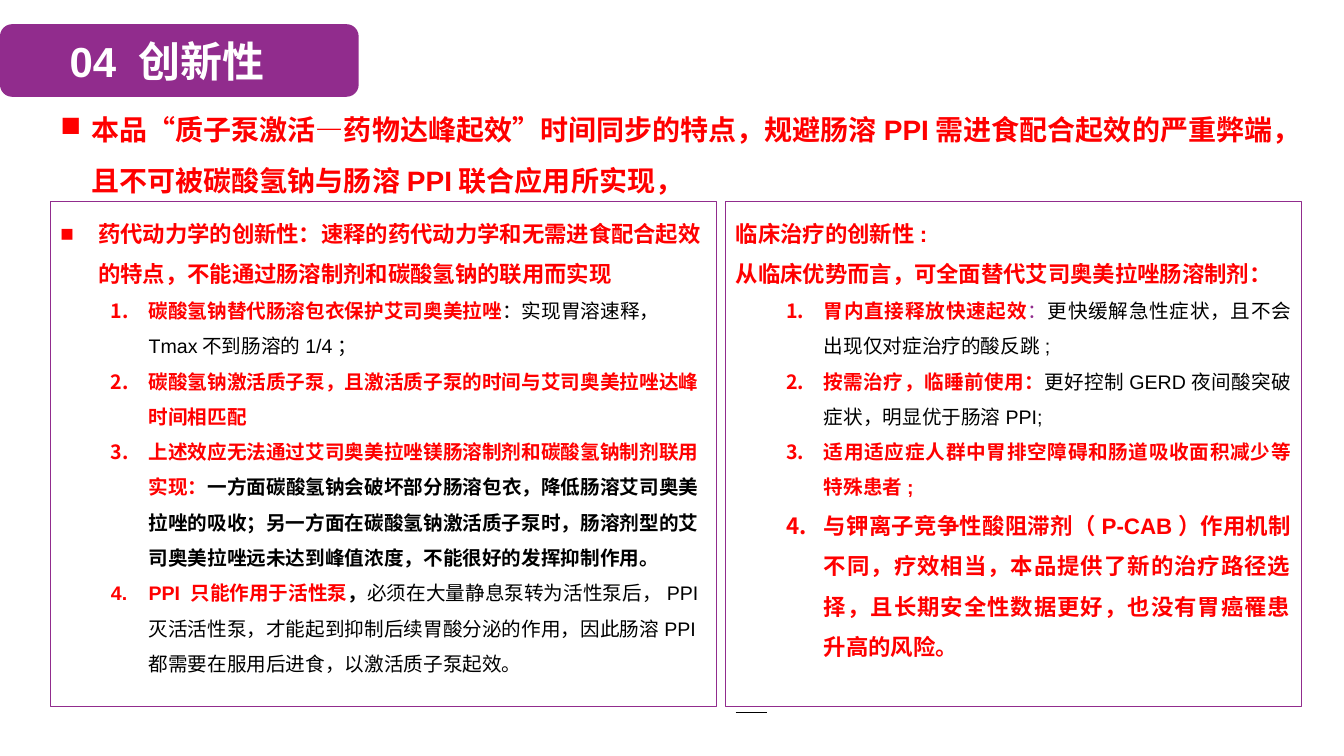
from dataclasses import dataclass

import pptx
import pptx.dml.color
import pptx.enum.shapes
import pptx.enum.text
import pptx.oxml
import pptx.oxml.ns
import pptx.util
from pptx.util import Cm

PURPLE = pptx.dml.color.RGBColor(0x91, 0x2C, 0x8D)
RED = pptx.dml.color.RGBColor(0xFF, 0, 0)
BLACK = pptx.dml.color.RGBColor(0, 0, 0)
WHITE = pptx.dml.color.RGBColor(0xFF, 0xFF, 0xFF)
FONT = "Arial"
LEFT = pptx.enum.text.PP_ALIGN.LEFT
JUSTIFY = pptx.enum.text.PP_ALIGN.JUSTIFY
SQUARE = '<a:buChar {} char="■"/>'
NUMBER = '<a:buAutoNum {} type="arabicPeriod"/>'
PLAIN = "<a:buNone {}/>"


@dataclass(frozen=True)
class Span:
    text: str
    color: pptx.dml.color.RGBColor = RED
    bold: bool = True


@dataclass(frozen=True)
class Para:
    spans: tuple[Span, ...]
    size: int = 14
    bullet: str = NUMBER
    margin: float = 2.22
    hanging: float = 0.95
    align: pptx.enum.text.PP_ALIGN = LEFT
    spacing: float = 1.5


@dataclass(frozen=True)
class Area:
    left: float
    top: float
    width: float
    height: float

    def lengths(self) -> tuple[int, ...]:
        return Cm(self.left), Cm(self.top), Cm(self.width), Cm(self.height)


TITLE = Para((Span("04 创新性", WHITE),), 30, PLAIN, 0, 0,
             pptx.enum.text.PP_ALIGN.CENTER, 1.0)
HEADLINE = Para((Span(
    "本品“质子泵激活—药物达峰起效”时间同步的特点，规避肠溶PPI需进食配合起效的严重弊端，"
    "且不可被碳酸氢钠与肠溶PPI联合应用所实现，"),), 20, SQUARE, 0.79, 0.79)

KINETICS = (
    Para((Span("药代动力学的创新性：速释的药代动力学和无需进食配合起效的特点，"
               "不能通过肠溶制剂和碳酸氢钠的联用而实现"),), 16, SQUARE, 0.95),
    Para((Span("碳酸氢钠替代肠溶包衣保护艾司奥美拉唑"),
          Span("：实现胃溶速释，Tmax不到肠溶的1/4；", BLACK, False))),
    Para((Span("碳酸氢钠激活质子泵，且激活质子泵的时间与艾司奥美拉唑达峰时间相匹配"),)),
    Para((Span("上述效应无法通过艾司奥美拉唑镁肠溶制剂和碳酸氢钠制剂联用实现："),
          Span("一方面碳酸氢钠会破坏部分肠溶包衣，降低肠溶艾司奥美拉唑的吸收；"
               "另一方面在碳酸氢钠激活质子泵时，肠溶剂型的艾司奥美拉唑远未达到峰值浓度，"
               "不能很好的发挥抑制作用。", BLACK))),
    Para((Span("PPI 只能作用于活性泵"),
          Span("，", BLACK),
          Span("必须在大量静息泵转为活性泵后，PPI灭活活性泵，才能起到抑制后续胃酸分泌的作用，"
               "因此肠溶PPI都需要在服用后进食，以激活质子泵起效。", BLACK, False))),
)

CLINIC = (
    Para((Span("临床治疗的创新性:"),), 16, PLAIN, 0, 0),
    Para((Span("从临床优势而言，可全面替代艾司奥美拉唑肠溶制剂："),), 16, PLAIN, 0, 0),
    Para((Span("胃内直接释放快速起效"),
          Span("：", PURPLE, False),
          Span("更快缓解急性症状，且不会出现仅对症治疗的酸反跳;", BLACK, False)),
         align=JUSTIFY),
    Para((Span("按需治疗，临睡前使用："),
          Span("更好控制GERD夜间酸突破症状，明显优于肠溶PPI;", BLACK, False)),
         align=JUSTIFY),
    Para((Span("适用适应症人群中胃排空障碍和肠道吸收面积减少等特殊患者;"),), align=JUSTIFY),
    Para((Span("与钾离子竞争性酸阻滞剂（P-CAB）作用机制不同，疗效相当，"
               "本品提供了新的治疗路径选择，且长期安全性数据更好，"
               "也没有胃癌罹患升高的风险。"),), 16, align=JUSTIFY),
)


def place(box, area: Area) -> None:
    box.left, box.top, box.width, box.height = area.lengths()


def write(box, paras: tuple[Para, ...]) -> None:
    frame = box.text_frame
    frame.word_wrap = True
    frame.auto_size = pptx.enum.text.MSO_AUTO_SIZE.NONE
    frame.vertical_anchor = pptx.enum.text.MSO_ANCHOR.TOP
    for index, para in enumerate(paras):
        paragraph = frame.add_paragraph() if index else frame.paragraphs[0]
        paragraph.alignment = para.align
        paragraph.level = int(para.bullet == NUMBER)
        paragraph.line_spacing = para.spacing
        paragraph.space_before = paragraph.space_after = pptx.util.Pt(0)
        properties = paragraph._p.get_or_add_pPr()
        properties.set("marL", str(Cm(para.margin)))
        properties.set("indent", str(-Cm(para.hanging)))
        properties.append(pptx.oxml.parse_xml(
            para.bullet.format(pptx.oxml.ns.nsdecls("a"))))
        for span in para.spans:
            run = paragraph.add_run()
            run.text = span.text
            run.font.name = FONT
            run.font.size = pptx.util.Pt(para.size)
            run.font.bold = span.bold
            run.font.color.rgb = span.color


def add_title(page) -> None:
    """Fill the title and lay its purple tab behind it."""
    title = page.shapes.title
    place(title, Area(0, 0.76, 8.41, 1.55))
    write(title, (TITLE,))
    tab = page.shapes.add_shape(
        pptx.enum.shapes.MSO_SHAPE.ROUNDED_RECTANGLE,
        *Area(0, 0.61, 9.04, 1.83).lengths())
    tab.shadow.inherit = False
    tab.fill.solid()
    tab.fill.fore_color.rgb = PURPLE
    tab.line.fill.background()
    title.element.addprevious(tab.element)


def fill_panel(panel, area: Area, paras: tuple[Para, ...]) -> None:
    place(panel, area)
    panel.line.color.rgb = PURPLE
    panel.line.width = pptx.util.Pt(0.75)
    write(panel, paras)


def add_rule(page, left: float, top: float, width: float) -> None:
    rule = page.shapes.add_connector(
        pptx.enum.shapes.MSO_CONNECTOR.STRAIGHT,
        Cm(left), Cm(top), Cm(left + width), Cm(top))
    rule.line.color.rgb = BLACK
    rule.line.width = pptx.util.Pt(0.75)
    rule.element.spPr.append(pptx.oxml.parse_xml(
        f"<a:effectLst {pptx.oxml.ns.nsdecls('a')}/>"))


def main() -> None:
    deck = pptx.Presentation()
    deck.slide_width, deck.slide_height = Cm(33.87), Cm(19.05)
    page = deck.slides.add_slide(deck.slide_layouts.get_by_name("Two Content"))
    add_title(page)
    fill_panel(page.placeholders[1], Area(1.27, 5.08, 16.79, 12.73), KINETICS)
    fill_panel(page.placeholders[2], Area(18.29, 5.08, 14.5, 12.73), CLINIC)
    headline = page.shapes.add_textbox(*Area(1.27, 2.29, 32.31, 2.82).lengths())
    write(headline, (HEADLINE,))
    add_rule(page, 18.54, 17.95, 0.79)
    deck.save("out.pptx")


if __name__ == "__main__":
    main()
